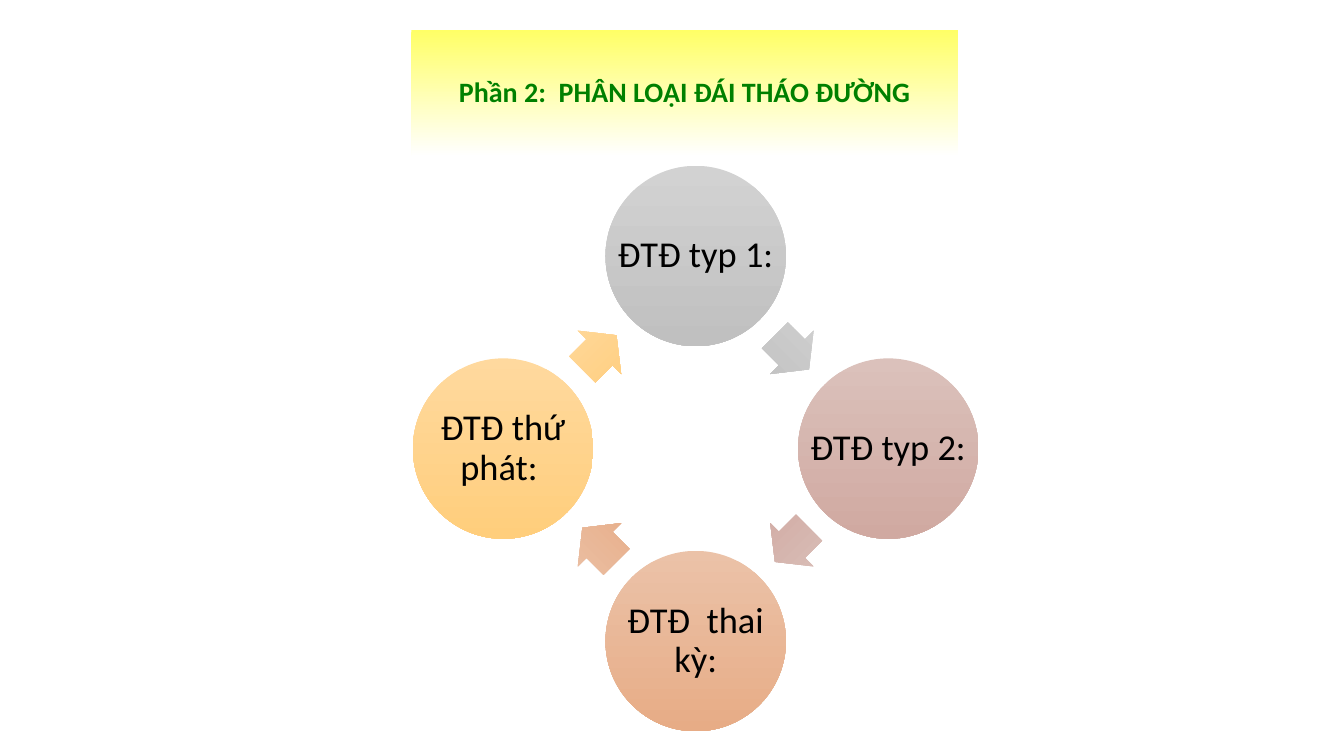
import math

import pptx
import pptx.dml.color
import pptx.enum.shapes
import pptx.enum.text
import pptx.util
from pptx.util import Inches

SHAPES = pptx.enum.shapes.MSO_SHAPE
CENTER_X, CENTER_Y = 6.9, 4.45
CIRCLE_ORBIT, ARROW_ORBIT = 1.91, 1.35
CIRCLE_SIZE = 1.79
ARROW_WIDTH, ARROW_HEIGHT = 0.48, 0.61

# Clockwise from the top: label, gradient top, gradient bottom
DIABETES_TYPES = [
    ("ĐTĐ typ 1:", "D2D2D2", "C0C0C0"),
    ("ĐTĐ typ 2:", "DBC1BB", "D0A9A1"),
    ("ĐTĐ  thai kỳ:", "EBC2A8", "E7AC86"),
    ("ĐTĐ thứ phát: ", "FFD99E", "FFCE7C"),
]


def rgb(value):
    return pptx.dml.color.RGBColor.from_string(value)


def add_gradient_shape(slide, kind, left, top, width, height, colors):
    shape = slide.shapes.add_shape(
        kind, Inches(left), Inches(top), Inches(width), Inches(height))
    shape.shadow.inherit = False
    shape.line.fill.background()
    shape.fill.gradient()
    shape.fill.gradient_angle = 270
    for stop, color in zip(shape.fill.gradient_stops, colors):
        stop.color.rgb = rgb(color)
    return shape


def write_text(shape, text, size, color, bold=False, wrap=True):
    frame = shape.text_frame
    frame.text = text
    frame.word_wrap = wrap
    frame.vertical_anchor = pptx.enum.text.MSO_ANCHOR.MIDDLE
    para = frame.paragraphs[0]
    para.alignment = pptx.enum.text.PP_ALIGN.CENTER
    para.line_spacing = 0.9
    font = para.runs[0].font
    font.name = "Calibri"
    font.size = pptx.util.Pt(size)
    font.bold = bold
    font.color.rgb = rgb(color)


def orbit_corner(angle, radius, width, height):
    """Top-left corner of a box centred on the cycle; 0 degrees is up, clockwise."""
    turn = math.radians(angle)
    return (CENTER_X + radius * math.sin(turn) - width / 2,
            CENTER_Y - radius * math.cos(turn) - height / 2)


def add_circle(slide, label, angle, colors):
    left, top = orbit_corner(angle, CIRCLE_ORBIT, CIRCLE_SIZE, CIRCLE_SIZE)
    add_gradient_shape(
        slide, SHAPES.OVAL, left, top, CIRCLE_SIZE, CIRCLE_SIZE, colors)
    # A square text box gives the label the full width of the circle
    box = slide.shapes.add_textbox(
        Inches(left), Inches(top), Inches(CIRCLE_SIZE), Inches(CIRCLE_SIZE))
    frame = box.text_frame
    frame.margin_left = frame.margin_right = Inches(0.04)
    frame.margin_top = frame.margin_bottom = Inches(0.04)
    write_text(box, label, 26, "000000")


def add_arrow(slide, angle, colors):
    left, top = orbit_corner(angle, ARROW_ORBIT, ARROW_WIDTH, ARROW_HEIGHT)
    arrow = add_gradient_shape(
        slide, SHAPES.RIGHT_ARROW, left, top, ARROW_WIDTH, ARROW_HEIGHT, colors)
    arrow.adjustments[0] = 0.6
    arrow.adjustments[1] = 0.5
    arrow.rotation = angle


def main():
    deck = pptx.Presentation()
    deck.slide_width = Inches(13.33)
    deck.slide_height = Inches(7.5)
    slide = deck.slides.add_slide(deck.slide_layouts[6])

    step = 360 / len(DIABETES_TYPES)
    for index, (label, *colors) in enumerate(DIABETES_TYPES):
        angle = index * step
        add_circle(slide, label, angle, colors)
        add_arrow(slide, angle + step / 2, colors)

    title = add_gradient_shape(
        slide, SHAPES.RECTANGLE, 4.08, 0.3, 5.42, 1.25, ("FFFF66", "FFFFFF"))
    write_text(title, "Phần 2:  PHÂN LOẠI ĐÁI THÁO ĐƯỜNG", 20, "008000",
               bold=True, wrap=False)

    deck.save("out.pptx")


if __name__ == "__main__":
    main()
